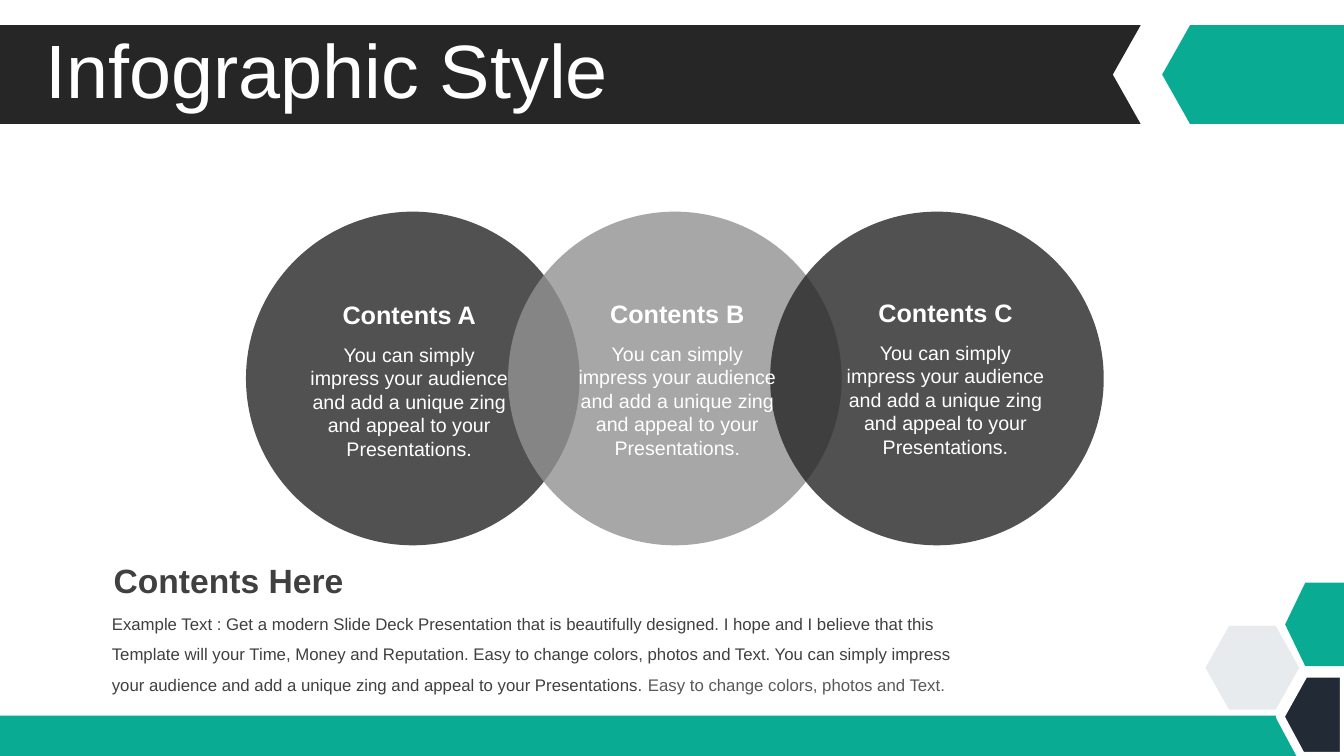
from pptx import Presentation
from pptx import util as u
from pptx.dml.color import RGBColor
from pptx.enum import shapes, text
from pptx.oxml.ns import qn
from lxml import etree

WIDTH, HEIGHT = 12192000, 6858000
COL, ROW = WIDTH // 40, HEIGHT // 30  # the slide is a grid of 40 columns by 30 rows

TEAL, DARK, NAVY, PALE, GREY = "09AB93", "262626", "222A35", "D9DEE2", "929292"
WHITE, INK, SOFT_INK = "FFFFFF", "404040", "595959"

PITCH = ("You can simply impress your audience and add a unique zing "
         "and appeal to your Presentations.")
EXAMPLE = ("Example Text : Get a modern Slide Deck Presentation that is beautifully "
           "designed. I hope and I believe that this Template will your Time, Money and "
           "Reputation. Easy to change colors, photos and Text. " + PITCH + " ")
EXAMPLE_END = "Easy to change colors, photos and Text."


def x(cols):
    return u.Emu(round(cols * COL))


def y(rows):
    return u.Emu(round(rows * ROW))


def place(box):
    left, top, width, height = box
    return x(left), y(top), x(width), y(height)


def paint(target, color, opacity=None):
    """Set a solid colour on a fill, with opacity in percent."""
    target.solid()
    target.fore_color.rgb = RGBColor.from_string(color)
    if opacity is not None:
        srgb = target._xPr.find(".//" + qn("a:srgbClr"))
        etree.SubElement(srgb, qn("a:alpha"), val=str(opacity * 1000))


def style(sp, color, opacity=None, border=None):
    sp.shadow.inherit = False
    paint(sp.fill, color, opacity)
    if border:
        paint(sp.line.fill, border)
        sp.line.width = u.Pt(6)
    else:
        sp.line.fill.background()


def add_preset(s, kind, box, color, opacity=None):
    style(s.shapes.add_shape(kind, *place(box)), color, opacity)


def add_outline(s, left, top, points, color, opacity=None, border=None):
    """Draw a closed polygon whose points are grid offsets from left, top."""
    start, *rest = [(x(left + dx), y(top + dy)) for dx, dy in points]
    builder = s.shapes.build_freeform(*start)
    builder.add_line_segments(rest, close=True)
    style(builder.convert_to_shape(), color, opacity, border)


def add_text(s, box, runs, size, bold=False, align=text.PP_ALIGN.LEFT, inset=0.1):
    """Add one paragraph of (wording, colour) runs and return its frame."""
    tf = s.shapes.add_textbox(*place(box)).text_frame
    tf.word_wrap = True
    tf.margin_left = tf.margin_right = u.Inches(inset)
    p = tf.paragraphs[0]
    p.alignment = align
    p.font.name, p.font.size, p.font.bold = "Arial", u.Pt(size), bold
    for wording, color in runs:
        r = p.add_run()
        r.text = wording
        r.font.color.rgb = RGBColor.from_string(color)
    return tf


def add_corner(s, box):
    """Hexagons in the lower right corner and the bar along the bottom edge."""
    left, top, width, height = box
    hexagon = 3.32
    add_outline(s, left, top + 1.72,
                [(0, 1.66), (0.7, 0), (2.09, 0), (2.79, 1.66), (2.09, hexagon), (0.7, hexagon)],
                PALE, opacity=60)
    add_outline(s, left + 2.37, top,
                [(0.6, 0), (width - 2.37, 0), (width - 2.37, hexagon), (0.6, hexagon), (0, 1.66)],
                TEAL)
    add_preset(s, shapes.MSO_SHAPE.RECTANGLE, (0, 28.4, 40, 1.6), TEAL)
    add_outline(s, left + 2.22, top + 3.6,
                [(width - 2.22, 0), (width - 2.22, height - 3.6), (0.63, height - 3.6),
                 (0, 1.72), (0.72, 0)],
                NAVY, border=WHITE)


def add_header(s, box, title):
    left, top, width, height = box
    notch, band, tip = 0.83, 33.95, 34.59
    add_outline(s, left, top,
                [(0, 0), (band, 0), (band - notch, height / 2), (band, height), (0, height)],
                DARK)
    add_outline(s, left + tip, top,
                [(notch, 0), (width - tip, 0), (width - tip, height), (notch, height),
                 (0, height / 2)],
                TEAL)
    tf = add_text(s, (left + 1.05, top + 0.36, width - 2, 3.16), [(title, WHITE)], 54)
    tf.vertical_anchor = text.MSO_ANCHOR.MIDDLE
    tf.paragraphs[0].line_spacing = 0.9
    tf.paragraphs[0].space_before = u.Pt(10)


def add_circles(s, box, circles):
    """Overlapping circles across the box, each with a heading and a text."""
    left, top, width, height = box
    diameter = height * ROW / COL
    step = (width - diameter) / (len(circles) - 1)
    for i, (_, color) in enumerate(circles):
        add_preset(s, shapes.MSO_SHAPE.OVAL, (left + i * step, top, diameter, height),
                   color, opacity=80)
    for i, (heading, _) in enumerate(circles):
        text_left = left + 1.59 + i * (step + 0.18)
        text_top = top + 3.28 - i * 0.04
        center = text.PP_ALIGN.CENTER
        add_text(s, (text_left, text_top + 1.72, 6.54, 5.12), [(PITCH, WHITE)], 14,
                 align=center, inset=0.08)
        add_text(s, (text_left, text_top, 6.54, 1.6), [(heading, WHITE)], 18,
                 bold=True, align=center)


def add_summary(s, box):
    left, top, width, height = box
    tf = add_text(s, (left, top + 1.72, width, height - 1.72),
                  [(EXAMPLE, INK), (EXAMPLE_END, SOFT_INK)], 12, inset=0.08)
    tf.paragraphs[0].line_spacing = 1.5
    add_text(s, (left, top, width, 2), [("Contents Here", INK)], 24, bold=True)


def main():
    prs = Presentation()
    prs.slide_width, prs.slide_height = WIDTH, HEIGHT
    s = prs.slides.add_slide(prs.slide_layouts[6])
    add_corner(s, (35.88, 23.12, 4.12, 6.88))
    add_header(s, (0, 1, 40, 3.92), "Infographic Style")
    add_circles(s, (7.32, 8.4, 25.53, 13.24),
                [("Contents A", DARK), ("Contents B", GREY), ("Contents C", DARK)])
    add_summary(s, (3.09, 22.04, 25.8, 5.6))
    prs.save("out.pptx")


if __name__ == "__main__":
    main()
